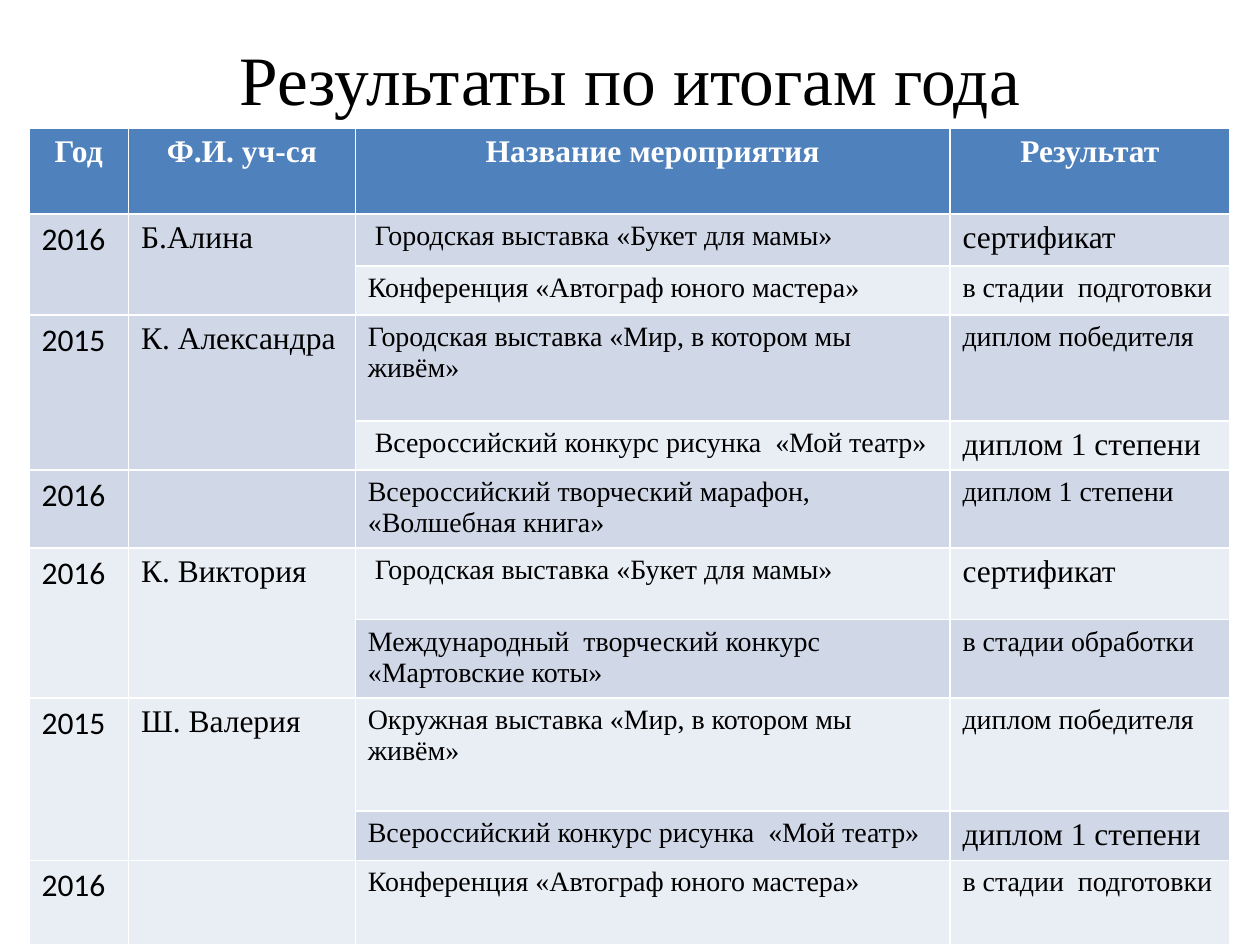
"""Build a slide with a table of pupils' results for the year."""
from pptx import Presentation
from pptx.dml.color import RGBColor
from pptx.enum.text import MSO_ANCHOR, PP_ALIGN
from pptx.util import Inches, Pt


def color(hex_value):
    return RGBColor.from_string(hex_value)


def write(frame, text, size=18, font="Times New Roman", ink="000000", bold=False, align=PP_ALIGN.LEFT):
    paragraph = frame.paragraphs[0]
    paragraph.alignment = align
    run = paragraph.add_run()
    run.text = text
    run.font.size = Pt(size)
    run.font.name = font
    run.font.bold = bold
    run.font.color.rgb = color(ink)


headings = ["Год", "Ф.И. уч-ся", "Название мероприятия", "Результат"]
column_widths = [0.79, 1.8, 4.72, 2.22]
header_height = 0.68
pupils = [
    ("2016", "Б.Алина", [
        (0.41, " Городская выставка «Букет для мамы»", "сертификат", 18),
        (0.39, "Конференция «Автограф юного мастера»", "в стадии  подготовки", 16)]),
    ("2015", "К. Александра", [
        (0.84, "Городская выставка «Мир, в котором мы живём»", "диплом победителя", 16),
        (0.39, " Всероссийский конкурс рисунка  «Мой театр»", "диплом 1 степени", 18)]),
    ("2016", "", [
        (0.62, "Всероссийский творческий марафон, «Волшебная книга»", "диплом 1 степени", 16)]),
    ("2016", "К. Виктория", [
        (0.57, " Городская выставка «Букет для мамы»", "сертификат", 18),
        (0.62, "Международный  творческий конкурс «Мартовские коты»", "в стадии обработки", 16)]),
    ("2015", "Ш. Валерия", [
        (0.9, "Окружная выставка «Мир, в котором мы живём»", "диплом победителя", 16),
        (0.39, "Всероссийский конкурс рисунка  «Мой театр»", "диплом 1 степени", 18)]),
    ("2016", "", [
        (0.67, "Конференция «Автограф юного мастера»", "в стадии  подготовки", 16)]),
]
heights = [header_height] + [event[0] for pupil in pupils for event in pupil[2]]

presentation = Presentation()
presentation.slide_width = Inches(10)
presentation.slide_height = Inches(7.5)
slide = presentation.slides.add_slide(presentation.slide_layouts[5])

title = slide.shapes.title
title.left, title.top = Inches(0.5), Inches(0.3)
title.width, title.height = Inches(9), Inches(0.64)
title.text_frame.vertical_anchor = MSO_ANCHOR.MIDDLE
write(title.text_frame, "Результаты по итогам года", size=39.6, align=PP_ALIGN.CENTER)

results = slide.shapes.add_table(
    len(heights), len(headings), Inches(0.23), Inches(1.02),
    Inches(sum(column_widths)), Inches(sum(heights))).table
for column, width in zip(results.columns, column_widths):
    column.width = Inches(width)
for index, height in enumerate(heights):
    results.rows[index].height = Inches(height)
    band = "4F81BD" if index == 0 else "D0D8E8" if index % 2 else "E9EDF4"
    for cell in results.rows[index].cells:
        cell.fill.solid()
        cell.fill.fore_color.rgb = color(band)

for index, heading in enumerate(headings):
    write(results.cell(0, index).text_frame, heading, ink="FFFFFF", bold=True, align=PP_ALIGN.CENTER)

row = 1
for year, name, events in pupils:
    if len(events) > 1:
        for index in range(2):
            results.cell(row, index).merge(results.cell(row + len(events) - 1, index))
    write(results.cell(row, 0).text_frame, year, font="Calibri")
    if name:
        write(results.cell(row, 1).text_frame, name)
    for height, event, result, result_size in events:
        write(results.cell(row, 2).text_frame, event, size=16)
        write(results.cell(row, 3).text_frame, result, size=result_size)
        row += 1

presentation.save("out.pptx")
